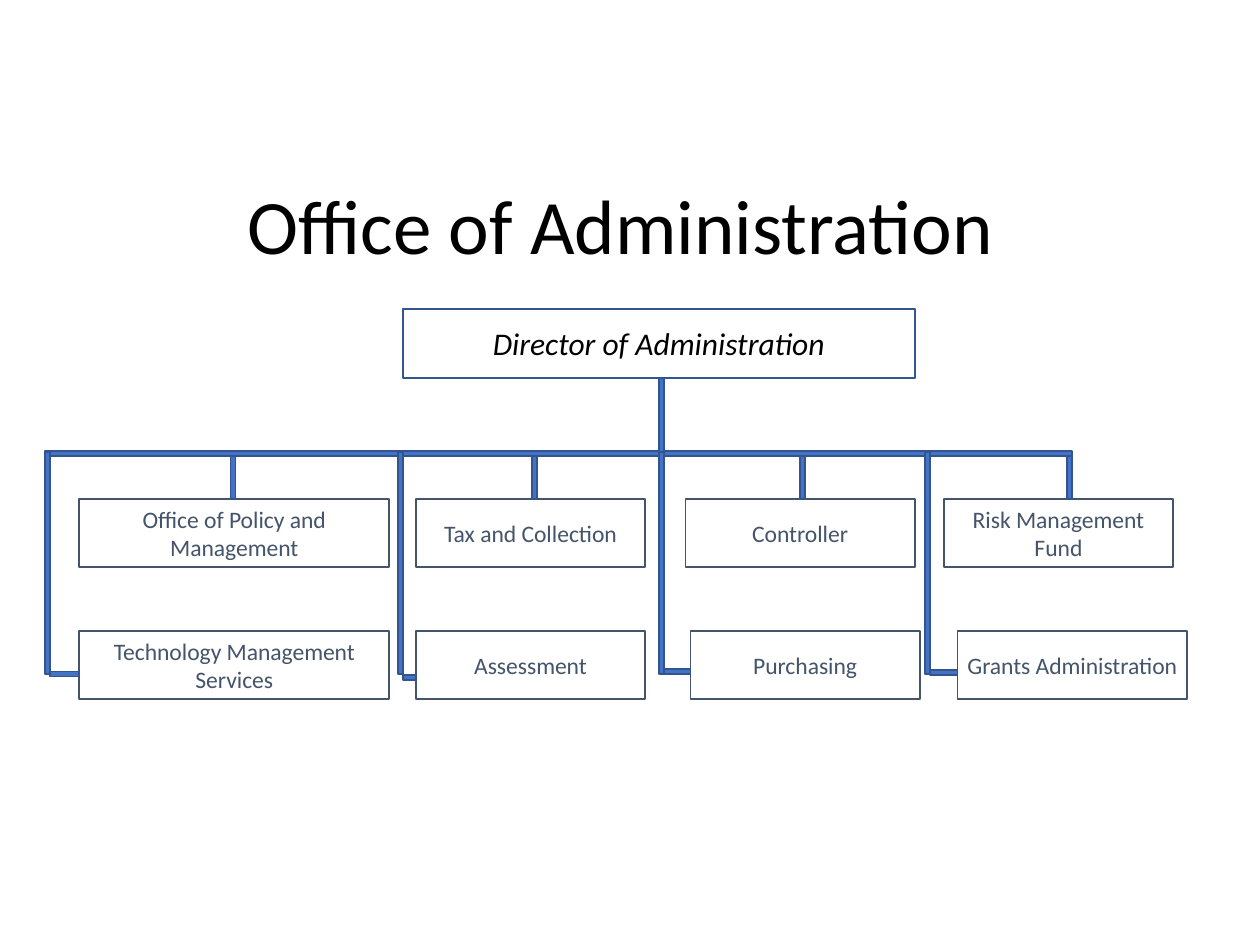
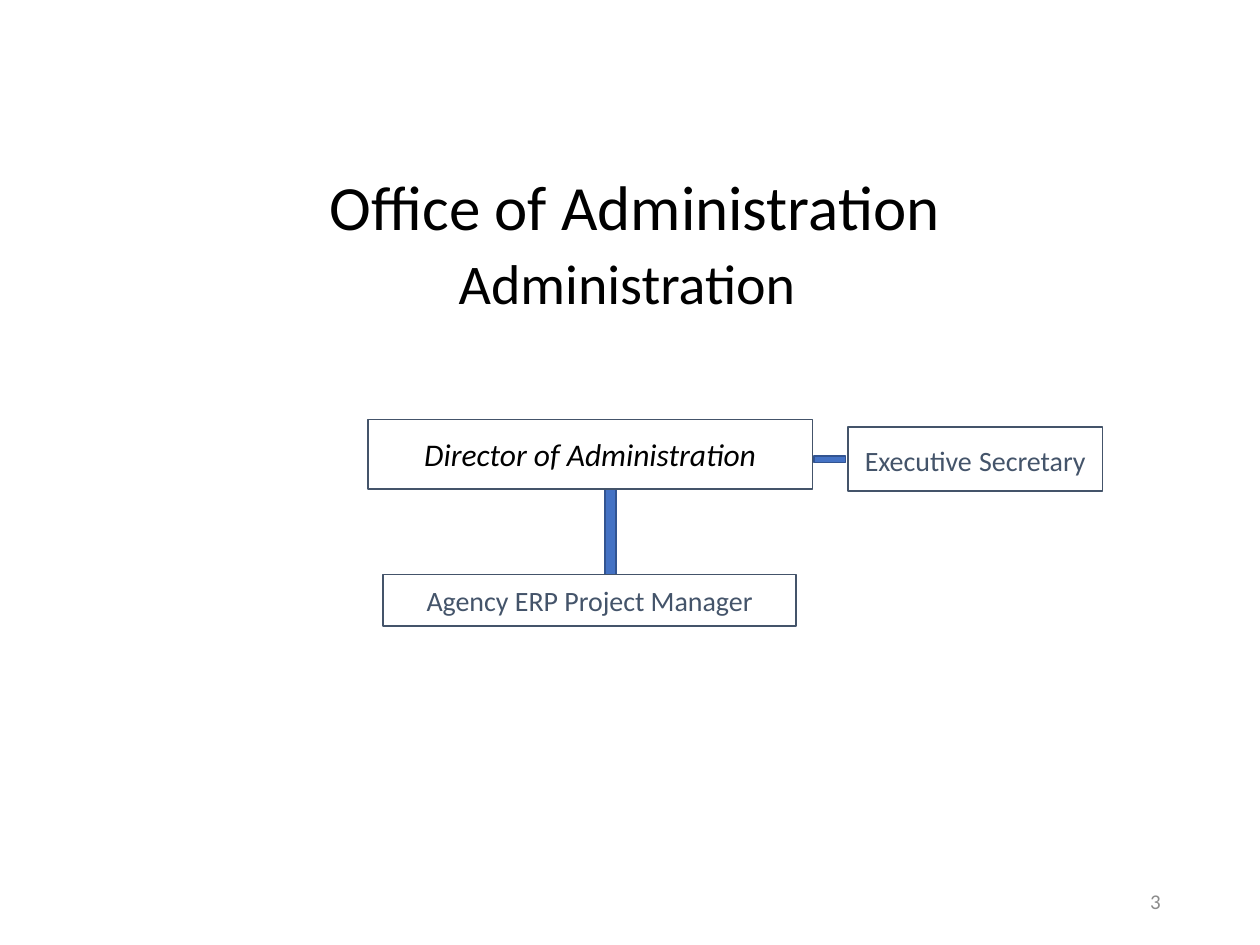
from pptx import Presentation
from pptx.dml.color import RGBColor
from pptx.enum.shapes import MSO_SHAPE
from pptx.enum.text import MSO_ANCHOR, PP_ALIGN
from pptx.util import Inches, Pt

RECTANGLE = MSO_SHAPE.RECTANGLE
MIDDLE = MSO_ANCHOR.MIDDLE
CENTER, RIGHT = PP_ALIGN.CENTER, PP_ALIGN.RIGHT

FONT = "Calibri"
BLACK = RGBColor(0x00, 0x00, 0x00)
WHITE = RGBColor(0xFF, 0xFF, 0xFF)
GRAY = RGBColor(0x8C, 0x8C, 0x8C)
SLATE = RGBColor(0x44, 0x54, 0x6A)
BLUE = RGBColor(0x44, 0x72, 0xC4)
DARK_BLUE = RGBColor(0x32, 0x54, 0x91)


def add_rectangle(page, place, fill, outline):
    box = page.shapes.add_shape(RECTANGLE, *[Inches(length) for length in place])
    box.shadow.inherit = False
    box.fill.solid()
    box.fill.fore_color.rgb = fill
    box.line.color.rgb = outline
    box.line.width = Pt(1)
    return box


def write(box, lines, color, align=CENTER, italic=False, margins=(0.1, 0.05), spacing=1.0):
    """Fill a box with lines, each a list of (text, point size) spans."""
    frame = box.text_frame
    frame.word_wrap = True
    frame.vertical_anchor = MIDDLE
    frame.margin_left = frame.margin_right = Inches(margins[0])
    frame.margin_top = frame.margin_bottom = Inches(margins[1])
    for index, spans in enumerate(lines):
        para = frame.add_paragraph() if index else frame.paragraphs[0]
        para.alignment = align
        para.line_spacing = spacing
        for text, size in spans:
            span = para.add_run()
            span.text = text
            span.font.name = FONT
            span.font.size = Pt(size)
            span.font.italic = italic
            span.font.color.rgb = color


deck = Presentation()
deck.slide_width = Inches(10)
deck.slide_height = Inches(7.5)
blank = deck.slide_layouts[6]

titles = [
    ((1.01, 1.21, 7.97, 1.23), [[("Office of Administration ", 44)]]),
    ((1, 1.24, 8.08, 1.45), [[("Office of Administration", 36)],
                             [("Administration", 32), (" ", 40)]]),
]
for place, lines in titles:
    page = deck.slides.add_slide(blank)
    title = page.shapes.add_textbox(*[Inches(length) for length in place])
    write(title, lines, BLACK, spacing=0.9)
departments_page, staff_page = deck.slides

# Departments under the director
TIGHT = (0.07, 0.04)
BAR = 0.04
BUS_TOP = 3.58
UPPER_TOP, LOWER_TOP = 3.96, 5.01
DEPARTMENT_HEIGHT = 0.54

director = add_rectangle(departments_page, (3.2, 2.45, 4.06, 0.55), WHITE, DARK_BLUE)
write(director, [[("Director of Administration", 18)]], BLACK, italic=True, margins=TIGHT)

# Each column: upper and lower left edge, width, drop x, trunk x, branch y, names
columns = [
    (0.63, 0.63, 2.46, 1.83, 0.36, 5.33,
     "Office of Policy and Management", "Technology Management Services"),
    (3.3, 3.3, 1.82, 4.22, 3.16, 5.36, "Tax and Collection", "Assessment"),
    (5.44, 5.48, 1.82, 6.35, 5.23, 5.31, "Controller", "Purchasing"),
    (7.49, 7.6, 1.82, 8.47, 7.34, 5.32, "Risk Management Fund", "Grants Administration"),
]
for upper_left, lower_left, width, drop, trunk, branch, upper, lower in columns:
    for left, top, name in ((upper_left, UPPER_TOP, upper), (lower_left, LOWER_TOP, lower)):
        box = add_rectangle(departments_page, (left, top, width, DEPARTMENT_HEIGHT), WHITE, SLATE)
        write(box, [[(name, 13.5)]], SLATE, margins=TIGHT)

bars = [(0.36, BUS_TOP, 8.15, BAR), (5.23, 3, BAR, 0.63)]
for upper_left, lower_left, width, drop, trunk, branch, upper, lower in columns:
    bars += [
        (drop, 3.62, BAR, UPPER_TOP - 3.62),
        (trunk, 3.59, BAR, 1.76),
        (trunk + BAR, branch, lower_left - trunk - BAR, BAR),
    ]
for place in bars:
    add_rectangle(departments_page, place, BLUE, DARK_BLUE)

# Staff of the director
for place in ((4.8, 3.88, 0.09, 0.7), (6.46, 3.62, 0.25, 0.05)):
    add_rectangle(staff_page, place, BLUE, DARK_BLUE)

staff = [
    ((2.92, 3.33, 3.53, 0.55), [("Director of Administration", 18)], BLACK, True),
    ((6.73, 3.39, 2.02, 0.51), [("Executive", 16), (" ", 18), ("Secretary", 16)], SLATE, False),
    ((3.04, 4.56, 3.28, 0.41), [("Agency ERP Project Manager", 16)], SLATE, False),
]
for place, spans, color, italic in staff:
    box = add_rectangle(staff_page, place, WHITE, SLATE)
    write(box, [spans], color, italic=italic)

page_number = staff_page.shapes.add_textbox(Inches(7.06), Inches(6.95), Inches(2.25), Inches(0.4))
write(page_number, [[("3", 12)]], GRAY, align=RIGHT)

deck.save("out.pptx")
